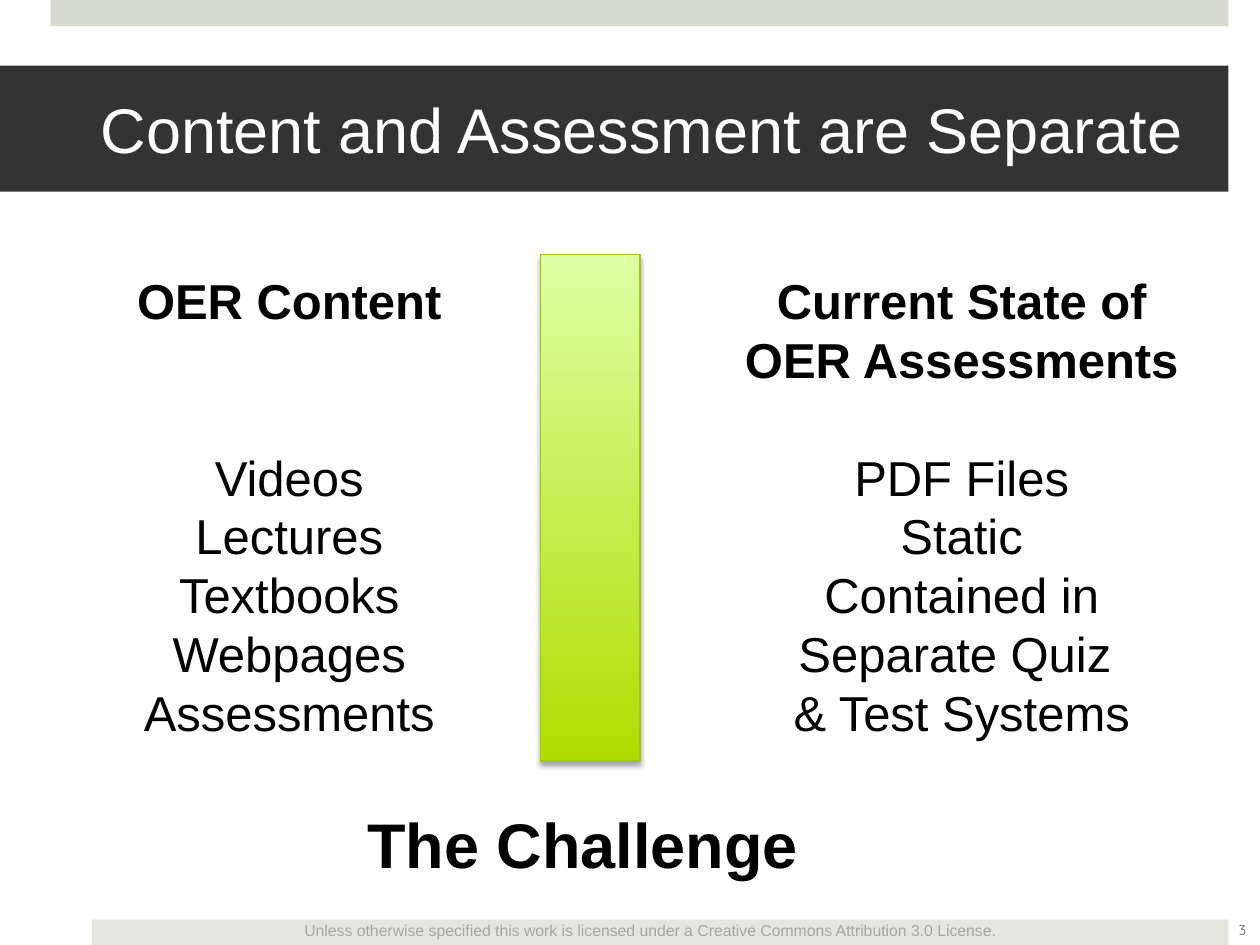
from lxml import etree
from pptx import Presentation
from pptx.dml.color import RGBColor
from pptx.enum.shapes import MSO_SHAPE
from pptx.enum.text import MSO_ANCHOR, PP_ALIGN
from pptx.oxml.ns import qn
from pptx.util import Pt

RECTANGLE = MSO_SHAPE.RECTANGLE
MIDDLE, TOP = MSO_ANCHOR.MIDDLE, MSO_ANCHOR.TOP
CENTER, LEFT = PP_ALIGN.CENTER, PP_ALIGN.LEFT

COLORS = {
    "top band": "D6D9CD",
    "footer band": "E4E6DE",
    "title band": "333333",
    "title": "FFFFFF",
    "body": "000000",
    "license": "A6A6A6",
    "number": "595959",
    "bar bottom": "AFDE00",
    "bar top": "DEFFA4",
    "bar line": "A1C811",
    "shadow": "000000",
}
LINE_FACTOR = 1.2
BODY_SIZE = 28
BODY_LINE = BODY_SIZE * LINE_FACTOR


def color(name):
    return RGBColor.from_string(COLORS[name])


def write(shape, lines, size, ink, align=CENTER, anchor=TOP, wrap=False,
          font="Arial", spacing=None):
    """Fill a shape with lines of (text, bold, space before in points)."""
    frame = shape.text_frame
    frame.word_wrap = wrap
    frame.vertical_anchor = anchor
    for index, (text, bold, before) in enumerate(lines):
        para = frame.paragraphs[0] if index == 0 else frame.add_paragraph()
        para.text = text
        para.alignment = align
        para.space_before = Pt(before)
        if spacing:
            para.line_spacing = Pt(spacing)
        for span in para.runs:
            formats = {"name": font, "size": Pt(size), "bold": bold}
            for key, value in formats.items():
                setattr(span.font, key, value)
            span.font.color.rgb = color(ink)


deck = Presentation()
deck.slide_width, deck.slide_height = Pt(720), Pt(540)
page = deck.slides.add_slide(deck.slide_layouts[6])
shapes = page.shapes

# Bands
bands = {}
for name, place in {
    "top band": (29, 0, 673, 15),
    "footer band": (52.5, 525.5, 649.5, 14.5),
    "title band": (0, 37.5, 702, 72),
}.items():
    band = shapes.add_shape(RECTANGLE, *map(Pt, place))
    band.shadow.inherit = False
    band.fill.solid()
    band.fill.fore_color.rgb = color(name)
    band.line.fill.background()
    bands[name] = band

# Title
title = bands["title band"]
title.text_frame.margin_left = Pt(57.6)
title.text_frame.margin_right = Pt(21.6)
write(title, [("Content and Assessment are Separate", False, 0)], 36, "title",
      align=LEFT, anchor=MIDDLE, wrap=True)

# Footer
license_box = shapes.add_textbox(Pt(54), Pt(522.7), Pt(635), Pt(18))
write(license_box, [("Unless otherwise specified this work is licensed under a "
                     "Creative Commons Attribution 3.0 License.", False, 0)],
      9, "license", wrap=True)
number_box = shapes.add_textbox(Pt(692), Pt(517), Pt(36), Pt(28.8))
write(number_box, [("3", False, 0)], 8, "number", anchor=MIDDLE, wrap=True,
      font="Quicksand")

# Dividing bar
bar = shapes.add_shape(RECTANGLE, Pt(308.7), Pt(145.3), Pt(57), Pt(289.5))
bar.fill.gradient()
bar.fill.gradient_angle = 90
for stop, name in zip(bar.fill.gradient_stops, ("bar bottom", "bar top")):
    stop.color.rgb = color(name)
bar.line.color.rgb = color("bar line")
bar.line.width = Pt(0.75)
bar.shadow.inherit = False
effects = bar.element.spPr.find(qn("a:effectLst"))
shadow = etree.SubElement(effects, qn("a:outerShdw"), blurRad=str(Pt(3.1)),
                          dist=str(Pt(1.8)), dir="5400000", rotWithShape="0")
shade = etree.SubElement(shadow, qn("a:srgbClr"), val=COLORS["shadow"])
etree.SubElement(shade, qn("a:alpha"), val="35000")

# Two columns, with both lists starting on the fourth line
columns = [
    (69.8, 191, ["OER Content"],
     ["Videos", "Lectures", "Textbooks", "Webpages", "Assessments"]),
    (417, 265, ["Current State of", "OER Assessments"],
     ["PDF Files", "Static", "Contained in\vSeparate Quiz ", "& Test Systems"]),
]
for left, width, heading, items in columns:
    gap = (3 - len(heading)) * BODY_LINE
    lines = [(text, True, 0) for text in heading]
    lines += [(text, False, 0 if index else gap)
              for index, text in enumerate(items)]
    box = shapes.add_textbox(Pt(left), Pt(151.2), Pt(width), Pt(278.6))
    write(box, lines, BODY_SIZE, "body", spacing=BODY_LINE)

challenge = shapes.add_textbox(Pt(201.5), Pt(457), Pt(263), Pt(51))
write(challenge, [("The Challenge", True, 0)], 36, "body",
      spacing=36 * LINE_FACTOR)

deck.save("out.pptx")
